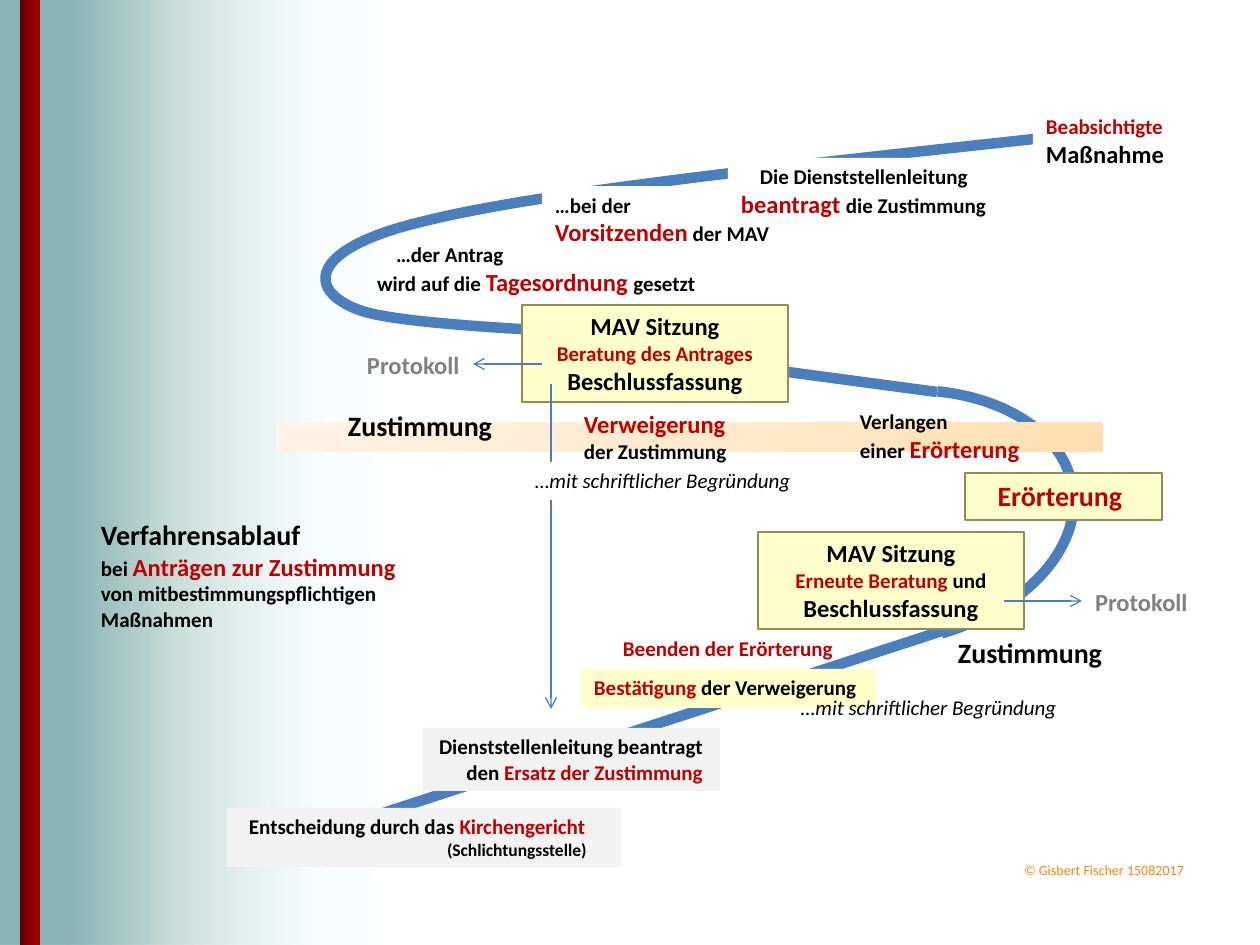
from dataclasses import dataclass

from lxml.etree import SubElement
from pptx import Presentation
from pptx.dml.color import RGBColor
from pptx.enum.shapes import MSO_CONNECTOR, MSO_SHAPE
from pptx.enum.text import MSO_ANCHOR, MSO_AUTO_SIZE, PP_ALIGN
from pptx.oxml.ns import qn
from pptx.util import Emu, Pt

PX = 914400 / 126
BLACK, RED, GRAY, ORANGE = "000000", "C00000", "808080", "FF8409"
BLUE, WHITE, YELLOW, PALE, OLIVE = "4B7EBC", "FFFFFF", "FFFFCC", "F2F2F2", "948A54"
LEFT, CENTER, RIGHT = PP_ALIGN.LEFT, PP_ALIGN.CENTER, PP_ALIGN.RIGHT


@dataclass
class Run:
    text: str
    size: int = 12
    color: str = BLACK
    bold: bool = True
    italic: bool = False


@dataclass
class Para:
    runs: list[Run]
    indent: int = 0


@dataclass
class Box:
    at: tuple[int, int, int, int]
    paras: list[Para]
    fill: str | None = None
    line: str | None = None
    align: PP_ALIGN = LEFT
    wrap: bool = True
    insets: tuple[int, int, int, int] = (13, 6, 13, 6)


def px(n: float) -> Emu:
    return Emu(round(n * PX))


def rgb(color: str) -> RGBColor:
    return RGBColor.from_string(color)


def para(*runs: Run, indent: int = 0) -> Para:
    return Para(list(runs), indent)


def set_line(s, width: float, color: str = BLUE) -> None:
    s.line.color.rgb = rgb(color)
    s.line.width = Pt(width)


def add_run(p, text: str, *, size: int, color: str, bold: bool, italic: bool) -> None:
    r = p.add_run()
    r.text = text
    font = r.font
    font.name, font.size, font.bold, font.italic = "Calibri", Pt(size), bold, italic
    font.color.rgb = rgb(color)


def add_box(slide, box: Box) -> None:
    at = map(px, box.at)
    if box.fill:
        s = slide.shapes.add_shape(MSO_SHAPE.RECTANGLE, *at)
        s.shadow.inherit = False
        s.fill.solid()
        s.fill.fore_color.rgb = rgb(box.fill)
        if box.line:
            set_line(s, 0.75, box.line)
        else:
            s.line.fill.background()
    else:
        s = slide.shapes.add_textbox(*at)
    tf = s.text_frame
    tf.word_wrap = box.wrap
    tf.auto_size = MSO_AUTO_SIZE.SHAPE_TO_FIT_TEXT
    tf.vertical_anchor = MSO_ANCHOR.TOP
    tf.margin_left, tf.margin_top, tf.margin_right, tf.margin_bottom = map(px, box.insets)
    for i, item in enumerate(box.paras):
        p = tf.paragraphs[0] if i == 0 else tf.add_paragraph()
        p.alignment = box.align
        if item.indent:
            p._p.get_or_add_pPr().set("marL", str(px(item.indent)))
        for run in item.runs:
            add_run(p, run.text, size=run.size, color=run.color,
                    bold=run.bold, italic=run.italic)


def add_gradient(slide, at: tuple, stops: list[tuple], angle: int | None = None) -> None:
    """Rectangle with (position, colour, opacity) stops; radial from the corner without angle."""
    s = slide.shapes.add_shape(MSO_SHAPE.RECTANGLE, *map(px, at))
    s.shadow.inherit = False
    s.line.fill.background()
    s.fill.gradient()
    grad = s._element.spPr.find(qn("a:gradFill"))
    for child in list(grad):
        grad.remove(child)
    gs_list = SubElement(grad, qn("a:gsLst"))
    for pos, color, opacity in stops:
        gs = SubElement(gs_list, qn("a:gs"), pos=str(pos * 1000))
        clr = SubElement(gs, qn("a:srgbClr"), val=color)
        if opacity < 100:
            SubElement(clr, qn("a:alpha"), val=str(opacity * 1000))
    if angle is None:
        path = SubElement(grad, qn("a:path"), path="circle")
        SubElement(path, qn("a:fillToRect"), l="100000", t="100000")
    else:
        SubElement(grad, qn("a:lin"), ang=str(angle * 60000), scaled="0")


def add_line(slide, x1: int, y1: int, x2: int, y2: int, width: float, arrow: bool = False) -> None:
    s = slide.shapes.add_connector(MSO_CONNECTOR.STRAIGHT, *map(px, (x1, y1, x2, y2)))
    set_line(s, width)
    if arrow:
        SubElement(s.line._get_or_add_ln(), qn("a:tailEnd"), type="arrow")
    SubElement(s._element.spPr, qn("a:effectLst"))


def add_curve(slide, start: tuple, segments: list[tuple], steps: int = 24) -> None:
    """Open line through cubic Bézier segments, each given as two controls and an end."""
    points, p0 = [], start
    for p1, p2, p3 in segments:
        for t in (i / steps for i in range(1, steps + 1)):
            u = 1 - t
            points.append(tuple(
                px(u**3 * a + 3 * u * u * t * b + 3 * u * t * t * c + t**3 * d)
                for a, b, c, d in zip(p0, p1, p2, p3)))
        p0 = p3
    builder = slide.shapes.build_freeform(*map(px, start))
    builder.add_line_segments(points, close=False)
    s = builder.convert_to_shape()
    s.shadow.inherit = False
    s.fill.background()
    set_line(s, 6)


def add_arc(slide, at: tuple, rotation: int, start: float, end: float) -> None:
    s = slide.shapes.add_shape(MSO_SHAPE.ARC, *map(px, at))
    s.shadow.inherit = False
    s.fill.background()
    s.rotation = rotation
    s.adjustments[0], s.adjustments[1] = start, end
    set_line(s, 6)


def protocol(x: int, y: int) -> Box:
    return Box((x, y, 130, 43), [para(Run("Protokoll", 14, GRAY))])


def consent(x: int, y: int) -> Box:
    return Box((x, y, 178, 47), [para(Run("Zustimmung", 16))], wrap=False)


def reason(x: int, y: int, fill: str | None = None) -> Box:
    run = Run("…mit schriftlicher Begründung", bold=False, italic=True)
    return Box((x, y, 285, 38), [para(run)], fill, wrap=False)


def meeting(x: int, y: int, *topic: Run) -> Box:
    paras = [para(Run("MAV Sitzung", 14)), para(*topic), para(Run("Beschlussfassung", 14))]
    return Box((x, y, 266, 97), paras, YELLOW, OLIVE, CENTER)


STEPS = [
    Box((364, 236, 360, 68), [
        para(Run("…der Antrag"), indent=19),
        para(Run("wird auf die "), Run("Tagesordnung ", 14, RED), Run("gesetzt"))]),
    protocol(354, 344),
    consent(335, 403),
    Box((423, 728, 297, 63), [
        para(Run("Dienststellenleitung beantragt")),
        para(Run("den "), Run("Ersatz der Zustimmung", color=RED))],
        PALE, align=RIGHT, wrap=False, insets=(13, 6, 17, 6)),
    Box((965, 473, 197, 47), [para(Run("Erörterung", 16, RED))],
        YELLOW, OLIVE, CENTER, insets=(13, 6, 20, 6)),
    meeting(758, 532, Run("Erneute Beratung ", color=RED), Run("und")),
    Box((227, 808, 394, 59), [
        para(Run("Entscheidung durch das "), Run("Kirchengericht", color=RED), indent=9),
        para(Run("(Schlichtungsstelle)", 10), indent=207)], PALE),
    Box((610, 630, 237, 38), [para(Run("Beenden der Erörterung", color=RED))]),
    consent(945, 630),
    Box((581, 669, 295, 39), [
        para(Run("Bestätigung ", color=RED), Run("der Verweigerung"))], YELLOW),
    Box((1033, 108, 150, 68), [
        para(Run("Beabsichtigte", color=RED)), para(Run("Maßnahme", 14))], WHITE, wrap=False),
    protocol(1082, 581),
    Box((542, 186, 242, 68), [
        para(Run("…bei der")),
        para(Run("Vorsitzenden", 14, RED), Run(" der MAV"))], WHITE, wrap=False),
    Box((728, 158, 278, 68), [
        para(Run("Die Dienststellenleitung"), indent=19),
        para(Run("beantragt ", 14, RED), Run("die Zustimmung"))], WHITE, wrap=False),
    meeting(522, 305, Run("Beratung des Antrages", color=RED)),
]
LABELS = [
    reason(522, 462, WHITE),
    Box((88, 512, 333, 127), [
        para(Run("Verfahrensablauf", 16)),
        para(Run("bei "), Run("Anträgen zur Zustimmung", 14, RED)),
        para(Run("von mitbestimmungspflichtigen")), para(Run("Maßnahmen"))], wrap=False),
    Box((1014, 857, 205, 28), [
        para(Run("© Gisbert Fischer 15082017", 8, ORANGE, bold=False))], insets=(10, 5, 10, 5)),
    reason(788, 689),
    Box((571, 403, 175, 68), [
        para(Run("Verweigerung", 14, RED)), para(Run("der Zustimmung"))], wrap=False),
    Box((847, 403, 192, 68), [
        para(Run("Verlangen")), para(Run("einer "), Run("Erörterung", 14, RED))], wrap=False),
]
SWEEP = [((796, 165), (541, 192), (425, 221)), ((309, 248), (305, 290), (359, 310)),
         ((412, 330), (682, 335), (746, 340)), ((811, 344), (779, 340), (746, 336))]
ARROWS = [(542, 364, 473, 364), (1004, 601, 1082, 601), (551, 384, 551, 709)]


def main() -> None:
    prs = Presentation()
    prs.slide_width, prs.slide_height = px(1260), px(945)
    slide = prs.slides.add_slide(prs.slide_layouts[6])
    add_gradient(slide, (0, 0, 374, 945),
                 [(11, "F0FCFE", 37), (55, "B7D3CC", 80), (82, "5D9699", 72)], 180)
    add_gradient(slide, (20, 0, 20, 945),
                 [(0, "600000", 100), (50, "890000", 100), (100, "A20000", 100)], 0)
    add_line(slide, 945, 630, 374, 816, 6)
    add_arc(slide, (761, 329, 251, 377), 81, 126.57, 206.13)
    add_curve(slide, (1053, 137), SWEEP)
    add_line(slide, 937, 392, 728, 364, 6)
    add_gradient(slide, (276, 423, 827, 29),
                 [(0, "FFDFAF", 100), (50, "FFEACE", 100), (100, "FFF4E7", 100)])
    for box in STEPS:
        add_box(slide, box)
    for ends in ARROWS:
        add_line(slide, *ends, 0.75, arrow=True)
    for box in LABELS:
        add_box(slide, box)
    prs.save("out.pptx")


if __name__ == "__main__":
    main()
